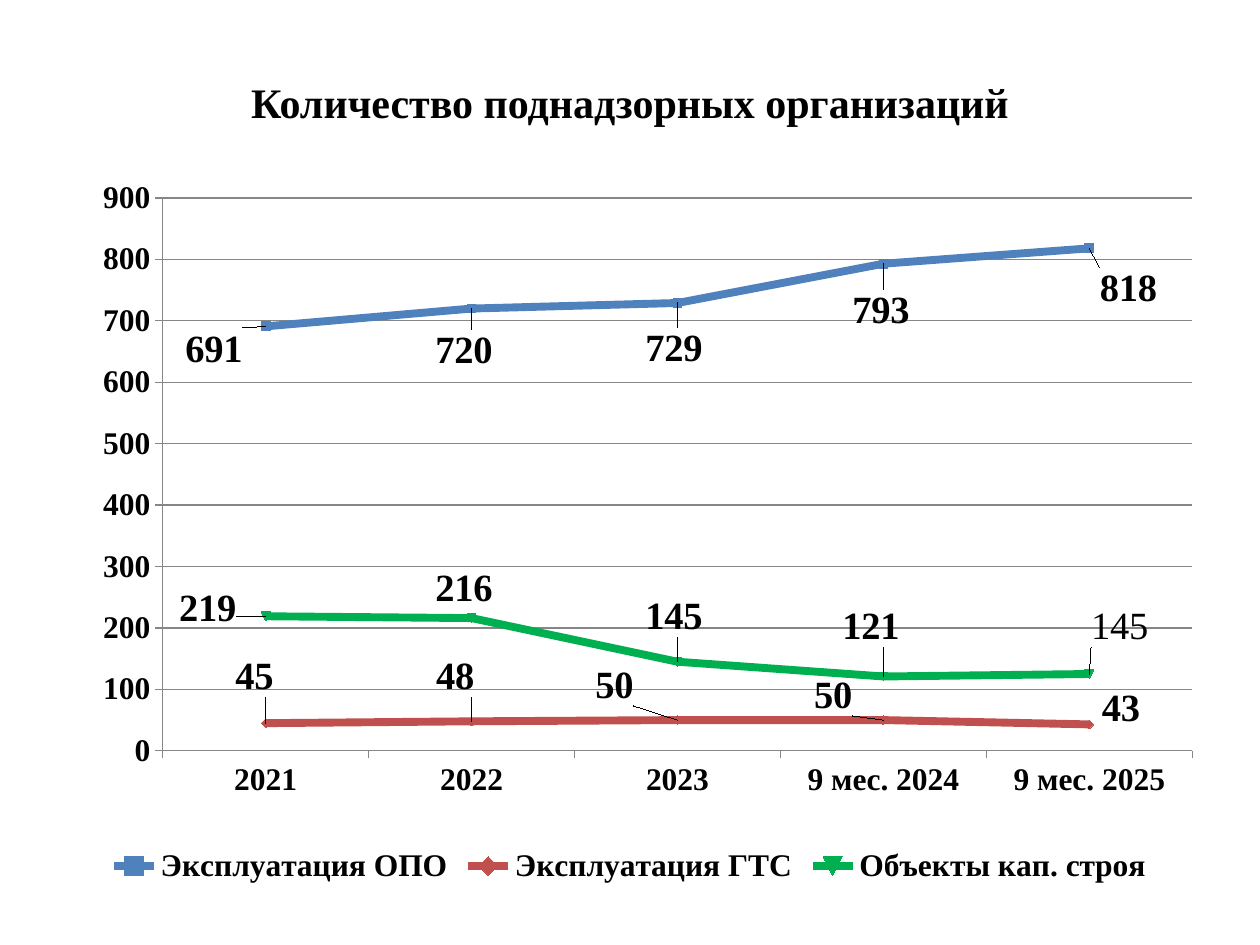
import pptx
import pptx.chart.data
import pptx.dml.color
import pptx.enum.chart
import pptx.enum.text
import pptx.oxml
import pptx.oxml.ns
import pptx.util

RGB = pptx.dml.color.RGBColor
BLACK = RGB(0x00, 0x00, 0x00)
GREY = RGB(0x86, 0x86, 0x86)
BLUE = RGB(0x4F, 0x81, 0xBD)
RED = RGB(0xC0, 0x50, 0x4D)
DARK = RGB(0xC0, 0x00, 0x00)
GREEN = RGB(0x00, 0xB0, 0x50)

WIDE, HIGH = 10, 7.5
CHART = (0.05, 0.185, 0.9, 0.756)
PLOT = (0.088, 0.032, 0.908, 0.774)
YEARS = ["2021", "2022", "2023", "9 мес. 2024", "9 мес. 2025"]

# Name, line colour, marker colour, values, label shifts from the points in inches
LINES = [
    ("Эксплуатация ОПО", BLUE, RED, [691, 720, 729, 793, 818],
     [(-0.41, 0.18), (-0.06, 0.33), (-0.03, 0.36), (-0.02, 0.37), (0.31, 0.32)]),
    ("Эксплуатация ГТС", RED, DARK, [45, 48, 50, 50, 43],
     [(-0.09, -0.37), (-0.13, -0.36), (-0.5, -0.28), (-0.4, -0.2), (0.25, -0.13)]),
    ("Объекты кап. строя", GREEN, GREEN, [219, 216, 145, 121, 125],
     [(-0.46, -0.06), (-0.06, -0.24), (-0.03, -0.36), (-0.1, -0.4), (0.24, -0.38)]),
]


def layout(x, y, size=None):
    """Manual chart layout; with a size it fixes the inner plot area."""
    tags = [("x", x), ("y", y)]
    if size:
        tags = [("layoutTarget", "inner"), ("xMode", "edge"), ("yMode", "edge"),
                *tags, ("w", size[0]), ("h", size[1])]
    body = "".join(f'<c:{tag} val="{val}"/>' for tag, val in tags)
    return pptx.oxml.parse_xml(
        f'<c:layout {pptx.oxml.ns.nsdecls("c")}>'
        f"<c:manualLayout>{body}</c:manualLayout></c:layout>")


class Deck:
    """Holds the text style and the current slide."""

    face = "Times New Roman"

    def __init__(self):
        self.prs = pptx.Presentation()
        self.prs.slide_width = pptx.util.Inches(WIDE)
        self.prs.slide_height = pptx.util.Inches(HIGH)
        self.slide = self.prs.slides.add_slide(self.prs.slide_layouts[5])

    def box(self, x, y, w, h):
        """Turn shares of the slide into lengths."""
        return [pptx.util.Inches(round(part * side, 2))
                for part, side in zip((x, y, w, h), (WIDE, HIGH) * 2)]

    def style(self, font, size, bold=True):
        font.name = self.face
        font.size = pptx.util.Pt(size)
        font.bold = bold
        font.color.rgb = BLACK

    def title(self, text, place):
        shape = self.slide.shapes.title
        shape.left, shape.top, shape.width, shape.height = self.box(*place)
        frame = shape.text_frame
        frame.text = text
        frame.vertical_anchor = pptx.enum.text.MSO_ANCHOR.MIDDLE
        frame.paragraphs[0].alignment = pptx.enum.text.PP_ALIGN.CENTER
        self.style(frame.paragraphs[0].runs[0].font, 24)

    def chart(self, place):
        data = pptx.chart.data.CategoryChartData()
        data.categories = YEARS
        for name, _, _, vals, _ in LINES:
            data.add_series(name, vals)
        kind = pptx.enum.chart.XL_CHART_TYPE.LINE_MARKERS
        chart = self.slide.shapes.add_chart(kind, *self.box(*place), data).chart
        self.style(chart.font, 18)
        chart.has_title = False
        chart.has_legend = True
        chart.legend.position = pptx.enum.chart.XL_LEGEND_POSITION.BOTTOM
        chart.legend.include_in_layout = False
        self.style(chart.legend.font, 18)
        self.axes(chart)
        plot = chart.plots[0]
        plot.vary_by_categories = False
        for line, spec in zip(plot.series, LINES):
            self.line(line, *spec[1:3])
            self.labels(line, spec[4])
        self.place(chart)
        return chart

    def axes(self, chart):
        vals = chart.value_axis
        vals.minimum_scale, vals.maximum_scale, vals.major_unit = 0, 900, 100
        vals.has_major_gridlines = True
        for axis in (vals, chart.category_axis):
            axis.major_tick_mark = pptx.enum.chart.XL_TICK_MARK.OUTSIDE
            axis.minor_tick_mark = pptx.enum.chart.XL_TICK_MARK.NONE
            self.style(axis.tick_labels.font, 18)
        for rule in (vals, vals.major_gridlines, chart.category_axis):
            rule.format.line.color.rgb = GREY
            rule.format.line.width = pptx.util.Pt(0.75)

    def line(self, line, hue, dot):
        line.smooth = False
        line.format.line.color.rgb = hue
        line.format.line.width = pptx.util.Pt(4.5)
        line.marker.size = 5
        line.marker.format.fill.solid()
        line.marker.format.fill.fore_color.rgb = dot

    def labels(self, line, shifts):
        self.style(line.data_labels.font, 22)
        line.data_labels.show_value = True
        for i in range(len(shifts)):
            label = line.points[i].data_label
            self.style(label.font, 22)
            label.position = pptx.enum.chart.XL_LABEL_POSITION.CENTER

    def place(self, chart):
        """Fix the plot area and shift each point label."""
        area = chart.element.xpath("c:chart/c:plotArea")[0]
        for old in area.xpath("c:layout"):
            area.remove(old)
        area.insert(0, layout(*PLOT[:2], PLOT[2:]))
        wide, high = WIDE * CHART[2], HIGH * CHART[3]
        shifts = [shift for spec in LINES for shift in spec[4]]
        for label, (x, y) in zip(area.xpath(".//c:dLbl"), shifts):
            label.insert(1, layout(round(x / wide, 4), round(y / high, 4)))

    def retext(self, chart, row, col, text):
        """Give one point label its own wording."""
        frame = chart.plots[0].series[row].points[col].data_label.text_frame
        frame.text = text
        self.style(frame.paragraphs[0].runs[0].font, 22, bold=False)


def main():
    deck = Deck()
    deck.title("Количество поднадзорных организаций", (0.05, 0.04, 0.9, 0.135))
    chart = deck.chart(CHART)
    deck.retext(chart, 2, 4, "145")
    deck.prs.save("out.pptx")


if __name__ == "__main__":
    main()
